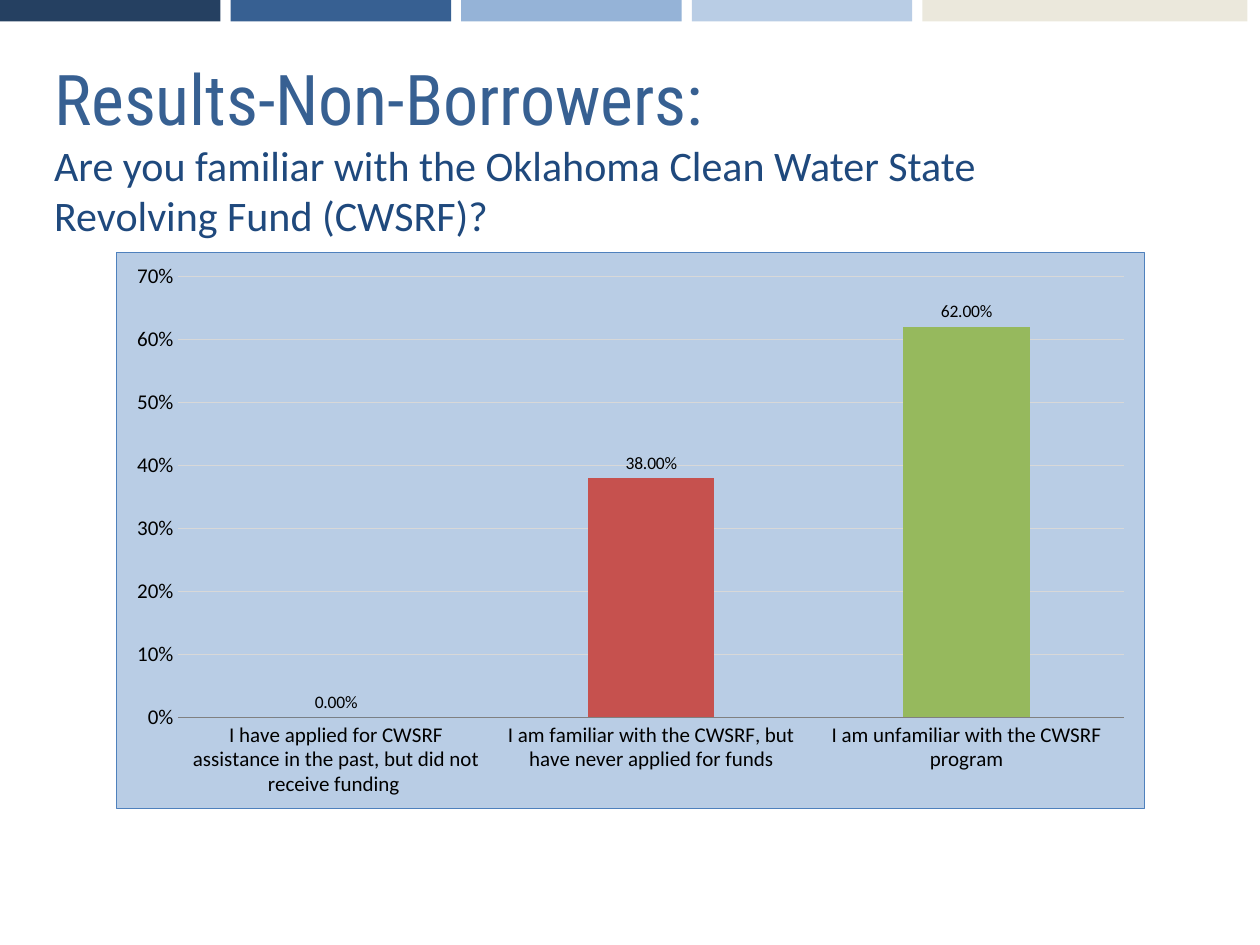
from lxml.etree import SubElement
from pptx import Presentation
from pptx.chart.data import CategoryChartData
from pptx.dml.color import RGBColor
from pptx.enum.chart import XL_CHART_TYPE as ChartType, XL_LABEL_POSITION as LabelPosition, XL_TICK_MARK as TickMark
from pptx.enum.shapes import MSO_SHAPE as Shape
from pptx.enum.text import MSO_ANCHOR as Anchor, MSO_AUTO_SIZE as AutoSize, PP_ALIGN as Align
from pptx.oxml import parse_xml
from pptx.oxml.ns import nsdecls, qn
from pptx.util import Inches, Pt

HEADING = "Results-Non-Borrowers:"
QUESTION = "Are you familiar with the Oklahoma Clean Water State Revolving Fund (CWSRF)?"
ANSWERS = [
    ("I have applied for CWSRF assistance in the past, but did not receive funding ", 0, "4980BA"),
    ("I am familiar with the CWSRF, but have never applied for funds", 0.38, "C6514E"),
    ("I am unfamiliar with the CWSRF program", 0.62, "96B95D"),
]
BANDS = [
    ("254061", 1.75, 100),
    ("376092", 1.75, 100),
    ("95B3D7", 1.75, 100),
    ("B9CDE5", 1.75, 100),
    ("DDD9C3", 2.58, 58),
]
BAND_HEIGHT = 0.17
BAND_GAP = 0.08


class Theme:
    heading_font = "Roboto Condensed"
    body_font = "Calibri"
    heading_color = "376092"
    question_color = "1F497D"
    chart_text = "000000"
    chart_fill = "B9CDE5"
    chart_border = "4F81BD"
    axis_line = "808080"
    grid_line = "D8D8D8"
    heading_size = 40
    question_size = 24
    chart_size = 18
    axis_size = 12
    label_size = 10
    line_width = 0.75


def format_font(font, name, size, color):
    font.name = name
    font.size = Pt(size)
    font.bold = False
    font.color.rgb = RGBColor.from_string(color)


def write_paragraph(paragraph, text, *, font, size, color):
    paragraph.alignment = Align.LEFT
    run = paragraph.add_run()
    run.text = text
    format_font(run.font, font, size, color)


def format_line(line, color):
    line.color.rgb = RGBColor.from_string(color)
    line.width = Pt(Theme.line_width)


def add_bands(slide):
    left = 0
    for color, width, opacity in BANDS:
        band = slide.shapes.add_shape(
            Shape.RECTANGLE, Inches(left), 0, Inches(width), Inches(BAND_HEIGHT))
        band.shadow.inherit = False
        band.fill.solid()
        band.fill.fore_color.rgb = RGBColor.from_string(color)
        band.line.fill.background()
        if opacity < 100:
            fill_color = band.fill._xPr.find(".//" + qn("a:srgbClr"))
            SubElement(fill_color, qn("a:alpha"), val=str(opacity * 1000))
        left += width + BAND_GAP


def fill_title(slide):
    title = slide.shapes.title
    title.left, title.top = Inches(0.33), Inches(0.42)
    title.width, title.height = Inches(8.75), Inches(1.5)
    frame = title.text_frame
    frame.word_wrap = True
    frame.auto_size = AutoSize.NONE
    frame.vertical_anchor = Anchor.MIDDLE
    write_paragraph(frame.paragraphs[0], HEADING, font=Theme.heading_font,
                    size=Theme.heading_size, color=Theme.heading_color)
    write_paragraph(frame.add_paragraph(), QUESTION, font=Theme.body_font,
                    size=Theme.question_size, color=Theme.question_color)


def format_chart_area(chart):
    area = parse_xml(
        f'<c:spPr {nsdecls("c", "a")}>'
        f'<a:solidFill><a:srgbClr val="{Theme.chart_fill}"/></a:solidFill>'
        f'<a:ln w="{Pt(Theme.line_width)}"><a:solidFill>'
        f'<a:srgbClr val="{Theme.chart_border}"/></a:solidFill></a:ln></c:spPr>')
    chart._chartSpace.find(qn("c:chart")).addnext(area)


def add_answer_chart(slide):
    data = CategoryChartData()
    data.categories = [answer for answer, _, _ in ANSWERS]
    data.add_series("Series 1", [share for _, share, _ in ANSWERS])
    chart = slide.shapes.add_chart(
        ChartType.COLUMN_CLUSTERED, Inches(0.92), Inches(2),
        Inches(8.17), Inches(4.42), data).chart
    chart.has_title = False
    chart.has_legend = False
    format_font(chart.font, Theme.body_font, Theme.chart_size, Theme.chart_text)
    format_chart_area(chart)

    for axis in (chart.category_axis, chart.value_axis):
        axis.major_tick_mark = axis.minor_tick_mark = TickMark.NONE
        format_font(axis.tick_labels.font, Theme.body_font, Theme.axis_size, Theme.chart_text)
    format_line(chart.category_axis.format.line, Theme.axis_line)
    value_axis = chart.value_axis
    value_axis.minimum_scale, value_axis.maximum_scale = 0, 0.7
    value_axis.major_unit = 0.1
    value_axis.tick_labels.number_format = "0%"
    value_axis.tick_labels.number_format_is_linked = False
    value_axis.format.line.fill.background()
    format_line(value_axis.major_gridlines.format.line, Theme.grid_line)

    plot = chart.plots[0]
    plot.gap_width = 150
    plot.vary_by_categories = False
    series = plot.series[0]
    for index, (_, _, color) in enumerate(ANSWERS):
        fill = series.points[index].format.fill
        fill.solid()
        fill.fore_color.rgb = RGBColor.from_string(color)
    labels = series.data_labels
    labels.show_value = True
    labels.number_format = "0.00%"
    labels.number_format_is_linked = False
    labels.position = LabelPosition.OUTSIDE_END
    format_font(labels.font, Theme.body_font, Theme.label_size, Theme.chart_text)


def main():
    presentation = Presentation()
    presentation.slide_width, presentation.slide_height = Inches(10), Inches(7.5)
    slide = presentation.slides.add_slide(presentation.slide_layouts[5])
    add_bands(slide)
    fill_title(slide)
    add_answer_chart(slide)
    presentation.save("out.pptx")


if __name__ == "__main__":
    main()
